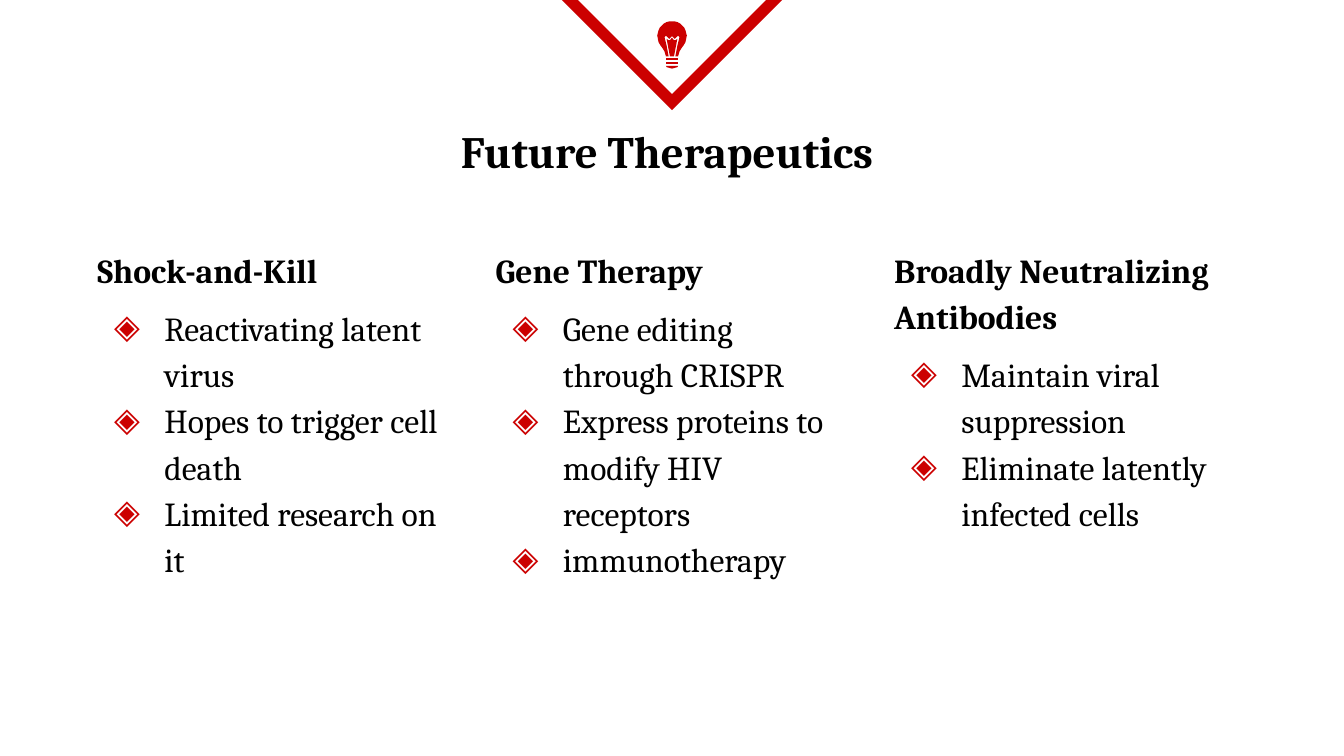
from lxml.etree import SubElement
from pptx import Presentation
from pptx.dml.color import RGBColor
from pptx.enum.shapes import MSO_SHAPE
from pptx.enum.text import MSO_ANCHOR, PP_ALIGN
from pptx.oxml.ns import qn
from pptx.util import Pt

EMU_PER_PX = 4572
SLIDE_SIZE = 2000, 1125
FONT, BLACK, RED = "Cambria", "000000", "CC0000"

TITLE = "Future Therapeutics "
THERAPIES = [
    ("Shock-and-Kill", ["Reactivating latent virus", "Hopes to trigger cell death",
                        "Limited research on it"]),
    ("Gene Therapy", ["Gene editing through CRISPR",
                      "Express proteins to modify HIV receptors", "immunotherapy"]),
    ("Broadly Neutralizing Antibodies", ["Maintain viral suppression",
                                         "Eliminate latently infected cells"]),
]
COLUMN_LEFT, COLUMN_TOP, COLUMN_STEP = 125, 343, 593
COLUMN_WIDTH, COLUMN_HEIGHT = 564, 756
INSET = 20

BULB_CENTER = 1000
BULB_HALVES = [
    [(-9, 92), (-9, 95)],
    [(-9, 86), (-9, 89)],
    [(-9, 98), (-8, 100), (0, 102)],
    [(0, 56), (-3, 60), (-5, 60), (-8, 58), (-3, 84)],
    [(0, 32), (-4, 32), (-8, 33), (-12, 35), (-15, 38), (-18, 41), (-20, 45), (-21, 49),
     (-22, 53), (-21, 58), (-20, 63), (-17, 68), (-14, 72), (-11, 77), (-10, 81),
     (-9, 84), (-5, 84), (-8, 68), (-11, 56), (-10, 54), (-8, 54), (-4, 58), (0, 54)],
]


def px(length):
    """Turn px into EMU."""
    return length * EMU_PER_PX


def color(hex_code):
    """Turn a hex string into a colour."""
    return RGBColor.from_string(hex_code)


def add_frame(slide, left, top, width, height):
    """Add a wrapping, top-anchored text box and return its text frame."""
    frame = slide.shapes.add_textbox(*map(px, (left, top, width, height))).text_frame
    frame.word_wrap = True
    frame.vertical_anchor = MSO_ANCHOR.TOP
    frame.margin_left = frame.margin_right = px(INSET)
    frame.margin_top = frame.margin_bottom = px(INSET)
    return frame


def add_run(paragraph, text, size, bold):
    """Add one styled run."""
    run = paragraph.add_run()
    run.text = text
    run.font.name, run.font.size, run.font.bold = FONT, Pt(size), bold
    run.font.color.rgb = color(BLACK)


def add_bullet(paragraph):
    """Give a paragraph a hanging red diamond."""
    properties = paragraph._p.get_or_add_pPr()
    properties.set("marL", str(px(100)))
    properties.set("indent", str(px(-75)))
    bullet_color = SubElement(properties, qn("a:buClr"))
    SubElement(bullet_color, qn("a:srgbClr"), val=RED)
    SubElement(properties, qn("a:buFont"), typeface=FONT)
    SubElement(properties, qn("a:buChar"), char="◈")


def add_pennant(slide):
    """Add the outlined triangle that points down from the top edge."""
    pennant = slide.shapes.add_shape(MSO_SHAPE.ISOSCELES_TRIANGLE,
                                     *map(px, (836, -12, 328, 164)))
    pennant.rotation = 180
    pennant.shadow.inherit = False
    pennant.fill.background()
    pennant.line.color.rgb = color(RED)
    pennant.line.width = Pt(6)
    SubElement(pennant.line._ln, qn("a:miter"), lim="800000")


def add_bulb(slide):
    """Add the light bulb, mirroring each half outline."""
    bulb = slide.shapes.add_group_shape()
    for half in BULB_HALVES:
        outline = half + [(-x, y) for x, y in reversed(half)]
        start, *rest = [(BULB_CENTER + x, y) for x, y in outline]
        builder = bulb.shapes.build_freeform(*start, scale=EMU_PER_PX)
        builder.add_line_segments(rest, close=True)
        part = builder.convert_to_shape()
        part.shadow.inherit = False
        part.fill.solid()
        part.fill.fore_color.rgb = color(RED)
        part.line.fill.background()


def add_therapy(slide, index, heading, points):
    """Add one column with its heading and bullets."""
    frame = add_frame(slide, COLUMN_LEFT + index * COLUMN_STEP, COLUMN_TOP,
                      COLUMN_WIDTH, COLUMN_HEIGHT)
    for row, text in enumerate([heading, *points]):
        paragraph = frame.add_paragraph() if row else frame.paragraphs[0]
        paragraph.line_spacing = 1.15
        paragraph.space_before = Pt(6 if row < 2 else 0)
        if row:
            add_bullet(paragraph)
        add_run(paragraph, text, 18, row == 0)


def main():
    """Build and save the slide."""
    deck = Presentation()
    deck.slide_width, deck.slide_height = map(px, SLIDE_SIZE)
    slide = deck.slides.add_slide(deck.slide_layouts[6])
    add_pennant(slide)
    title = add_frame(slide, 226, 164, 1548, 118).paragraphs[0]
    title.alignment = PP_ALIGN.CENTER
    add_run(title, TITLE, 24, True)
    for index, (heading, points) in enumerate(THERAPIES):
        add_therapy(slide, index, heading, points)
    add_bulb(slide)
    deck.save("out.pptx")


if __name__ == "__main__":
    main()
